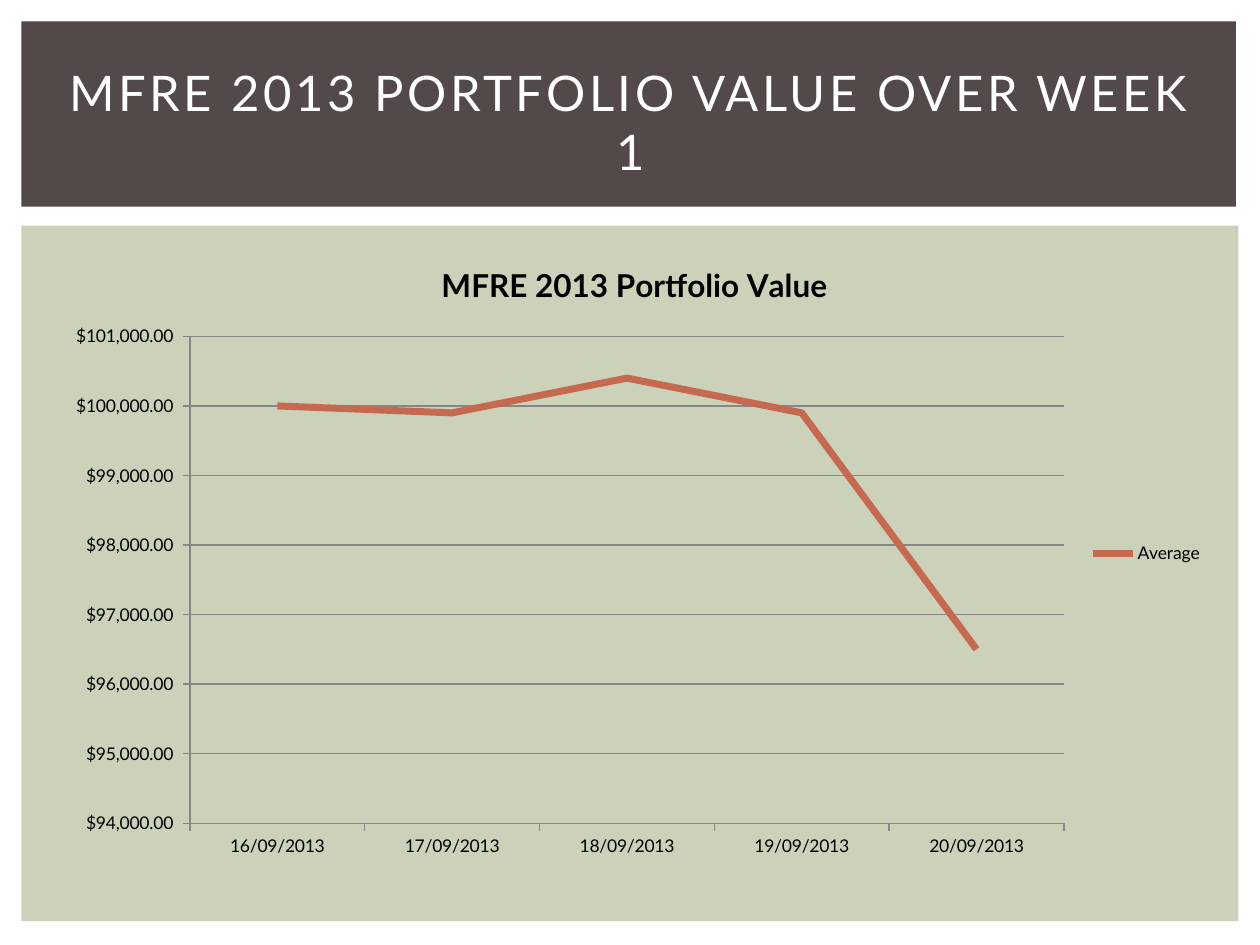
from pptx import Presentation
from pptx.chart.data import CategoryChartData
from pptx.dml.color import RGBColor
from pptx.enum.chart import XL_CHART_TYPE, XL_LEGEND_POSITION, XL_MARKER_STYLE, XL_TICK_MARK
from pptx.enum.shapes import MSO_SHAPE
from pptx.enum.text import MSO_ANCHOR, PP_ALIGN
from pptx.util import Inches, Pt

LINE_CHART = XL_CHART_TYPE.LINE
LEGEND_RIGHT = XL_LEGEND_POSITION.RIGHT
NO_MARKER = XL_MARKER_STYLE.NONE
TICK_OUTSIDE = XL_TICK_MARK.OUTSIDE
RECTANGLE = MSO_SHAPE.RECTANGLE
MIDDLE = MSO_ANCHOR.MIDDLE
CENTER = PP_ALIGN.CENTER

FONT = "Lato"
WHITE, BLACK = "FFFFFF", "000000"
BROWN, SAGE, RUST, GRAY = "534949", "CCD1B9", "C66951", "878787"
DOLLARS = r'"$"#,##0.00_);[Red]\("$"#,##0.00\)'

DAILY_VALUES = {
    "16/09/2013": 100000,
    "17/09/2013": 99900,
    "18/09/2013": 100400,
    "19/09/2013": 99900,
    "20/09/2013": 96500,
}


def color(hex_code):
    return RGBColor.from_string(hex_code)


def style_font(font, size, hex_code, bold=False):
    font.name = FONT
    font.size = Pt(size)
    font.bold = bold
    font.color.rgb = color(hex_code)


def style_line(line, width, hex_code):
    line.color.rgb = color(hex_code)
    line.width = Pt(width)


def add_panel(page, left, top, width, height, fill):
    panel = page.shapes.add_shape(
        RECTANGLE, Inches(left), Inches(top), Inches(width), Inches(height))
    panel.shadow.inherit = False
    panel.fill.solid()
    panel.fill.fore_color.rgb = color(fill)
    panel.line.fill.background()


def add_heading(page, left, top, width, height, text):
    box = page.shapes.add_textbox(
        Inches(left), Inches(top), Inches(width), Inches(height))
    frame = box.text_frame
    frame.word_wrap = True
    frame.vertical_anchor = MIDDLE
    frame.text = text
    para = frame.paragraphs[0]
    para.alignment = CENTER
    span = para.runs[0]
    style_font(span.font, 28, WHITE)
    span.font._element.set("spc", "200")


def add_value_chart(page, left, top, width, height):
    data = CategoryChartData()
    data.categories = list(DAILY_VALUES)
    data.add_series("Average", list(DAILY_VALUES.values()))
    chart = page.shapes.add_chart(
        LINE_CHART, Inches(left), Inches(top), Inches(width), Inches(height), data).chart
    style_font(chart.font, 10, BLACK)

    chart.has_title = True
    title = chart.chart_title
    title.include_in_layout = False
    title.text_frame.text = "MFRE 2013 Portfolio Value"
    style_font(title.text_frame.paragraphs[0].runs[0].font, 18, BLACK, bold=True)

    chart.has_legend = True
    chart.legend.position = LEGEND_RIGHT
    chart.legend.include_in_layout = False

    value_axis = chart.value_axis
    value_axis.minimum_scale, value_axis.maximum_scale = 94000, 101000
    value_axis.major_unit = 1000
    value_axis.has_major_gridlines = True
    value_axis.tick_labels.number_format = DOLLARS
    value_axis.tick_labels.number_format_is_linked = False
    for axis in (chart.category_axis, value_axis):
        axis.major_tick_mark = TICK_OUTSIDE
        style_line(axis.format.line, 0.75, GRAY)
    style_line(value_axis.major_gridlines.format.line, 0.75, GRAY)

    plot = chart.plots[0]
    plot.vary_by_categories = False
    average = plot.series[0]
    average.smooth = False
    average.marker.style = NO_MARKER
    style_line(average.format.line, 4, RUST)


def main():
    deck = Presentation()
    deck.slide_width, deck.slide_height = Inches(10), Inches(7.5)
    page = deck.slides.add_slide(deck.slide_layouts[6])
    add_panel(page, 0.17, 1.79, 9.66, 5.52, SAGE)
    add_panel(page, 0.17, 0.17, 9.64, 1.47, BROWN)
    add_heading(page, 0.42, 0.39, 9.17, 1.15, "MFRE 2013 PORTFOLIO VALUE OVER WEEK 1")
    add_value_chart(page, 0.42, 1.88, 9.23, 5.02)
    deck.save("out.pptx")


if __name__ == "__main__":
    main()
